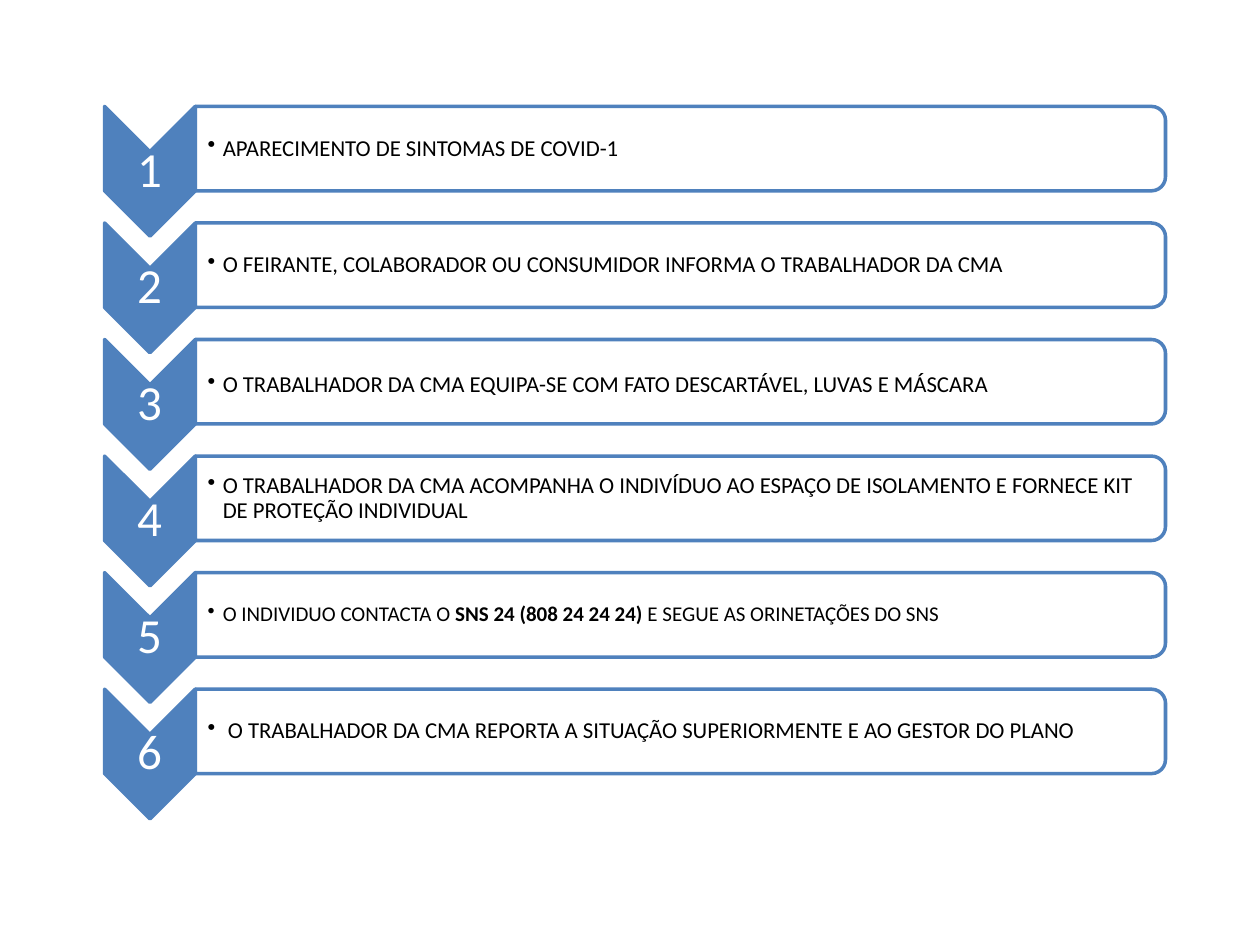
from dataclasses import dataclass

from lxml import etree
from pptx import Presentation
from pptx import util as u
from pptx.dml.color import RGBColor
from pptx.enum import shapes, text
from pptx.oxml.ns import qn


@dataclass(frozen=True)
class Theme:
    font: str = "Calibri"
    accent: RGBColor = RGBColor(0x4F, 0x81, 0xBD)
    paper: RGBColor = RGBColor(0xFF, 0xFF, 0xFF)
    ink: RGBColor = RGBColor(0, 0, 0)
    number_size: float = 28
    step_size: float = 13
    small_size: float = 12
    line_width: float = 2


THEME = Theme()

# Layout in inches
TOP, PITCH = 0.845, 0.925
LEFT, ARROW_WIDTH, ARROW_HEIGHT = 0.83, 0.72, 1.03
PANEL_LEFT, PANEL_WIDTH, PANEL_HEIGHT = 1.55, 7.7, 0.67

# Each step: (text runs as (wording, bold), type size, downward text shift)
STEPS = [
    ([("APARECIMENTO DE SINTOMAS DE COVID-1", False)], THEME.step_size, 0),
    ([("O FEIRANTE, COLABORADOR OU CONSUMIDOR INFORMA O TRABALHADOR DA CMA", False)],
     THEME.step_size, 0),
    ([("O TRABALHADOR DA CMA EQUIPA-SE COM FATO DESCARTÁVEL, LUVAS E MÁSCARA", False)],
     THEME.step_size, 0.03),
    ([("O TRABALHADOR DA CMA ACOMPANHA O INDIVÍDUO AO ESPAÇO DE ISOLAMENTO "
       "E FORNECE KIT DE PROTEÇÃO INDIVIDUAL", False)], THEME.step_size, 0),
    ([("O INDIVIDUO CONTACTA O ", False), ("SNS 24 (808 24 24 24)", True),
      (" E SEGUE AS ORINETAÇÕES DO SNS", False)], THEME.small_size, 0),
    ([(" O TRABALHADOR DA CMA REPORTA A SITUAÇÃO SUPERIORMENTE E AO GESTOR DO PLANO", False)],
     THEME.step_size, 0),
]


def apply_format(target, values):
    for name, value in values.items():
        setattr(target, name, value)


def add_turned_shape(slide, preset, left, top, width, height, fill):
    """Add a preset turned by 90° so that it covers the given area."""
    shift = (width - height) / 2
    turned = slide.shapes.add_shape(
        preset, u.Inches(left + shift), u.Inches(top - shift),
        u.Inches(height), u.Inches(width))
    turned.rotation = 90
    turned.shadow.inherit = False
    turned.fill.solid()
    turned.fill.fore_color.rgb = fill
    turned.line.color.rgb = THEME.accent
    turned.line.width = u.Pt(THEME.line_width)
    return turned


def add_label(slide, left, top, width, height, runs, size, color, insets, paragraph_format):
    label = slide.shapes.add_textbox(*map(u.Inches, (left, top, width, height)))
    frame = label.text_frame
    sides = ("margin_left", "margin_top", "margin_right", "margin_bottom")
    apply_format(frame, {"word_wrap": True, "vertical_anchor": text.MSO_ANCHOR.MIDDLE,
                         **dict(zip(sides, map(u.Inches, insets)))})
    paragraph = frame.paragraphs[0]
    apply_format(paragraph, {"line_spacing": 0.9, **paragraph_format})
    for wording, bold in runs:
        run = paragraph.add_run()
        run.text = wording
        apply_format(run.font, {"name": THEME.font, "size": u.Pt(size), "bold": bold})
        run.font.color.rgb = color
    return paragraph


def add_bullet(paragraph, indent):
    properties = paragraph._p.get_or_add_pPr()
    properties.set("marL", str(u.Inches(indent)))
    properties.set("indent", str(-u.Inches(indent)))
    etree.SubElement(properties, qn("a:buChar"), char="•")


def add_number_arrow(slide, number, top):
    add_turned_shape(slide, shapes.MSO_SHAPE.CHEVRON, LEFT, top,
                     ARROW_WIDTH, ARROW_HEIGHT, THEME.accent)
    add_label(slide, LEFT, top + 0.36, ARROW_WIDTH, 0.31, [(str(number), False)],
              THEME.number_size, THEME.paper, [0.02] * 4,
              {"alignment": text.PP_ALIGN.CENTER, "space_after": u.Pt(10)})


def add_step_panel(slide, runs, size, shift, top):
    panel = add_turned_shape(slide, shapes.MSO_SHAPE.ROUND_2_SAME_RECTANGLE, PANEL_LEFT, top,
                             PANEL_WIDTH, PANEL_HEIGHT, THEME.paper)
    # Slightly see-through fill
    tint = panel._element.spPr.find(qn("a:solidFill"))[0]
    etree.SubElement(tint, qn("a:alpha"), val="90000")
    step = add_label(slide, PANEL_LEFT, top + 0.03 + shift, 7.67, 0.61, runs, size, THEME.ink,
                     [0.1, 0.01, 0.01, 0.01], {"level": 1, "space_after": u.Pt(2)})
    add_bullet(step, 0.12)


def main():
    deck = Presentation()
    apply_format(deck, {"slide_width": u.Inches(10), "slide_height": u.Inches(7.5)})
    slide = deck.slides.add_slide(deck.slide_layouts[6])

    # Numbered steps from top to bottom
    for index, (runs, size, shift) in enumerate(STEPS):
        top = TOP + index * PITCH
        add_number_arrow(slide, index + 1, top)
        add_step_panel(slide, runs, size, shift, top)

    deck.save("out.pptx")


if __name__ == "__main__":
    main()
